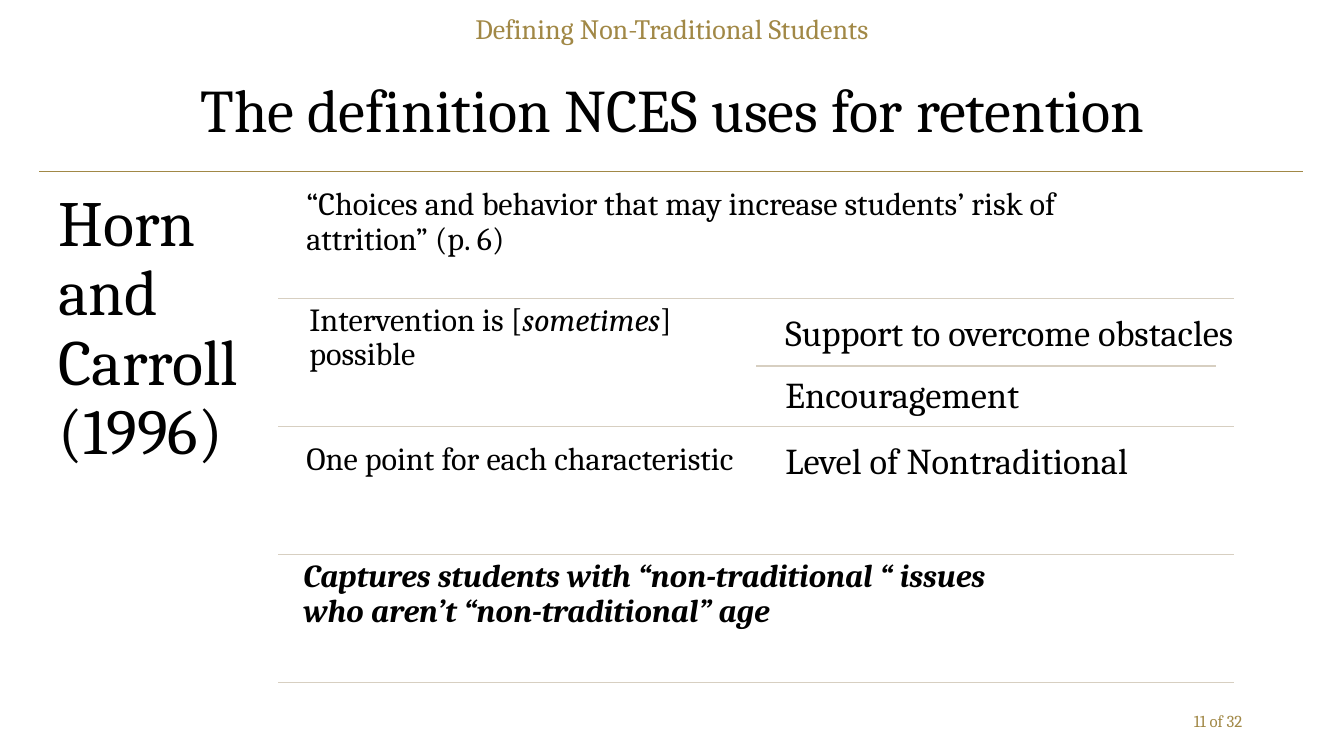
from pptx import Presentation
from pptx.dml.color import RGBColor
from pptx.enum.shapes import MSO_CONNECTOR
from pptx.enum.text import MSO_ANCHOR, MSO_AUTO_SIZE, PP_ALIGN
from pptx.oxml.xmlchemy import OxmlElement
from pptx.util import Inches, Pt

BLACK = RGBColor(0x00, 0x00, 0x00)
GOLD = RGBColor(0xA1, 0x88, 0x46)
SAND = RGBColor(0xD7, 0xCF, 0xC1)


class SlideBuilder:
    """Hold the font and current slide, and add its titles, text and rules."""

    def __init__(self, prs, font="Cambria"):
        self.font = font
        self.slide = prs.slides.add_slide(prs.slide_layouts[5])

    def fill_text(self, sp, runs, size, color=BLACK, align=PP_ALIGN.LEFT,
                  anchor=MSO_ANCHOR.TOP, spacing=0.9, inset=(0.1, 0.05)):
        tf = sp.text_frame
        tf.word_wrap = True
        tf.auto_size = MSO_AUTO_SIZE.NONE
        tf.vertical_anchor = anchor
        tf.margin_left = tf.margin_right = Inches(inset[0])
        tf.margin_top = tf.margin_bottom = Inches(inset[1])
        p = tf.paragraphs[0]
        p.alignment = align
        p.line_spacing = spacing
        p.space_before = Pt(0)
        for text, bold, italic in runs:
            r = p.add_run()
            r.text = text
            r.font.name = self.font
            r.font.size = Pt(size)
            r.font.bold = bold
            r.font.italic = italic
            r.font.color.rgb = color

    def title(self, text, x, y, w, h, size):
        sp = self.slide.shapes.title
        sp.left, sp.top, sp.width, sp.height = map(Inches, (x, y, w, h))
        self.fill_text(sp, [(text, False, False)], size,
                       align=PP_ALIGN.CENTER, anchor=MSO_ANCHOR.MIDDLE)

    def text(self, runs, x, y, w, h, size, **style):
        if isinstance(runs, str):
            runs = [(runs, False, False)]
        sp = self.slide.shapes.add_textbox(*map(Inches, (x, y, w, h)))
        self.fill_text(sp, runs, size, **style)

    def rule(self, x1, x2, y, color=SAND):
        line = self.slide.shapes.add_connector(
            MSO_CONNECTOR.STRAIGHT, *map(Inches, (x1, y, x2, y)))
        line.line.color.rgb = color
        line.line.width = Pt(1)
        line._element.spPr.append(OxmlElement("a:effectLst"))


def main():
    prs = Presentation()
    prs.slide_width, prs.slide_height = Inches(13.33), Inches(7.5)
    s = SlideBuilder(prs)

    s.title("The definition NCES uses for retention", 0.92, 0.4, 11.5, 1.45, 43.2)
    s.text("Defining Non-Traditional Students", 0, 0.13, 13.33, 0.4, 20,
           color=GOLD, align=PP_ALIGN.CENTER, spacing=0.8)

    s.rule(0.39, 12.92, 1.7, GOLD)
    for row in range(4):
        s.rule(2.76, 12.24, 2.96 + row * 1.27)
    s.rule(7.5, 12.06, 3.63)

    s.text("Horn and Carroll (1996)", 0.39, 1.7, 2.37, 5.13, 46, inset=(0.19, 0.19))

    points = [
        ("“Choices and behavior that may increase students’ risk of attrition” (p. 6)",
         2.94, 1.76, 8.72),
        ([("Intervention is [", False, False), ("sometimes", False, True),
          ("] possible", False, False)], 2.97, 2.91, 4.56),
        ("One point for each characteristic", 2.94, 4.29, 4.56),
        ([("Captures students with “non-traditional “ issues who aren’t "
           "“non-traditional” age", True, True)], 2.91, 5.45, 7.42),
    ]
    for runs, x, y, w in points:
        s.text(runs, x, y, w, 1.21, 23, inset=(0.1, 0.1))

    details = [
        ("Support to overcome obstacles", 3.02, 5.23, 0.6),
        ("Encouragement", 3.63, 4.56, 0.6),
        ("Level of Nontraditional", 4.29, 4.56, 1.21),
    ]
    for text, y, w, h in details:
        s.text(text, 7.68, y, w, h, 26, inset=(0.11, 0.11))

    s.text("11 of 32", 9.42, 6.95, 3, 0.4, 12, color=GOLD, align=PP_ALIGN.RIGHT,
           anchor=MSO_ANCHOR.MIDDLE, spacing=1.0)
    prs.save("out.pptx")


if __name__ == "__main__":
    main()
